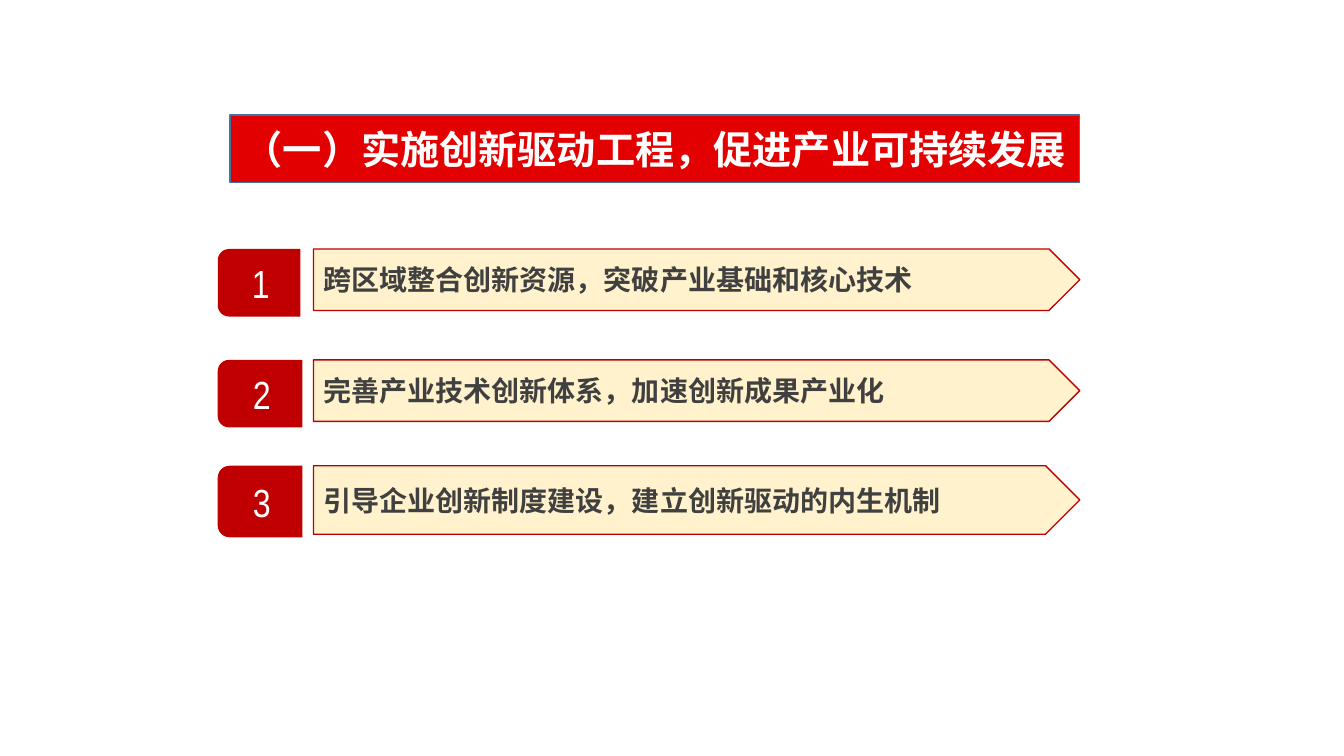
from dataclasses import dataclass

from lxml import etree
from pptx import Presentation
from pptx.dml.color import RGBColor
from pptx.enum.shapes import MSO_SHAPE
from pptx.enum.text import MSO_ANCHOR, MSO_AUTO_SIZE, PP_ALIGN
from pptx.oxml.ns import qn
from pptx.util import Inches, Pt

ARROW_BAR = MSO_SHAPE.PENTAGON
BADGE = MSO_SHAPE.ROUND_2_SAME_RECTANGLE
LEFT, CENTER = PP_ALIGN.LEFT, PP_ALIGN.CENTER
MIDDLE = MSO_ANCHOR.MIDDLE
NO_FIT = MSO_AUTO_SIZE.NONE
TITLE_ONLY = 5


@dataclass(frozen=True)
class Theme:
    banner: str = "E30000"
    banner_edge: str = "760303"
    banner_line: str = "43739E"
    accent: str = "C00000"
    bar: str = "FFF2CC"
    ink: str = "404040"
    light: str = "FFFFFF"
    chinese: str = "Noto Sans CJK SC"
    title_font: str = "Calibri"
    digit_font: str = "Arial Narrow"
    large: int = 28
    body: int = 20
    line: int = 1


THEME = Theme()
TITLE_BOX = (2.28, 1.14, 8.43, 0.67)
ROW_LEFT, ROW_WIDTH, BAR_OFFSET = 2.16, 8.55, 0.95
# Top, bar height, badge width, badge height, text
ROWS = [
    (2.47, 0.61, 0.82, 0.67, "跨区域整合创新资源，突破产业基础和核心技术"),
    (3.57, 0.61, 0.84, 0.67, "完善产业技术创新体系，加速创新成果产业化"),
    (4.62, 0.68, 0.84, 0.71, "引导企业创新制度建设，建立创新驱动的内生机制"),
]


def write_text(shape, text, align, color, **font_format):
    frame = shape.text_frame
    frame.word_wrap = True
    frame.auto_size = NO_FIT
    frame.vertical_anchor = MIDDLE
    para = frame.paragraphs[0]
    para.alignment = align
    para.line_spacing = 1.0
    span = para.add_run()
    span.text = text
    for name, value in font_format.items():
        setattr(span.font, name, value)
    span.font.color.rgb = RGBColor.from_string(color)
    east_asian = etree.Element(qn("a:ea"), typeface=THEME.chinese)
    span.font._element.find(qn("a:latin")).addnext(east_asian)


def add_solid_shape(page, kind, box, fill):
    shape = page.shapes.add_shape(kind, *map(Inches, box))
    shape.shadow.inherit = False
    shape.fill.solid()
    shape.fill.fore_color.rgb = RGBColor.from_string(fill)
    return shape


def set_outline(shape, color):
    shape.line.color.rgb = RGBColor.from_string(color)
    shape.line.width = Pt(THEME.line)


def place_title(page, box, text):
    title = page.shapes.title
    for name, value in zip(("left", "top", "width", "height"), box):
        setattr(title, name, Inches(value))
    title.fill.gradient()
    title.fill.gradient_angle = 270
    stops = ((0.99, THEME.banner), (1.0, THEME.banner_edge))
    for stop, (position, color) in zip(title.fill.gradient_stops, stops):
        stop.position = position
        stop.color.rgb = RGBColor.from_string(color)
    set_outline(title, THEME.banner_line)
    write_text(title, text, CENTER, THEME.light, name=THEME.title_font,
               size=Pt(THEME.large), bold=True)


def add_badge(page, box, digit):
    """Turn a top-rounded shape left, keeping its digit upright in the box."""
    left, top, width, height = box
    shift = (width - height) / 2
    turned_box = (left + shift, top - shift, height, width)
    badge = add_solid_shape(page, BADGE, turned_box, THEME.accent)
    badge.rotation = 270
    badge.line.fill.background()
    write_text(badge, digit, CENTER, THEME.light, name=THEME.digit_font,
               size=Pt(THEME.large), bold=False)
    badge.text_frame._txBody.bodyPr.set("vert", "vert")


def add_row(page, box, badge_size, number, text):
    left, top, width, height = box
    bar_box = (left + BAR_OFFSET, top, width - BAR_OFFSET, height)
    bar = add_solid_shape(page, ARROW_BAR, bar_box, THEME.bar)
    set_outline(bar, THEME.accent)
    write_text(bar, text, LEFT, THEME.ink, name=THEME.chinese,
               size=Pt(THEME.body), bold=True)
    add_badge(page, (left, top, *badge_size), str(number))


def main():
    deck = Presentation()
    deck.slide_width, deck.slide_height = Inches(13.33), Inches(7.5)
    page = deck.slides.add_slide(deck.slide_layouts[TITLE_ONLY])
    place_title(page, TITLE_BOX, "（一）实施创新驱动工程，促进产业可持续发展")
    for number, row in enumerate(ROWS, start=1):
        top, height, badge_width, badge_height, text = row
        add_row(page, (ROW_LEFT, top, ROW_WIDTH, height),
                (badge_width, badge_height), number, text)
    deck.save("out.pptx")


if __name__ == "__main__":
    main()
